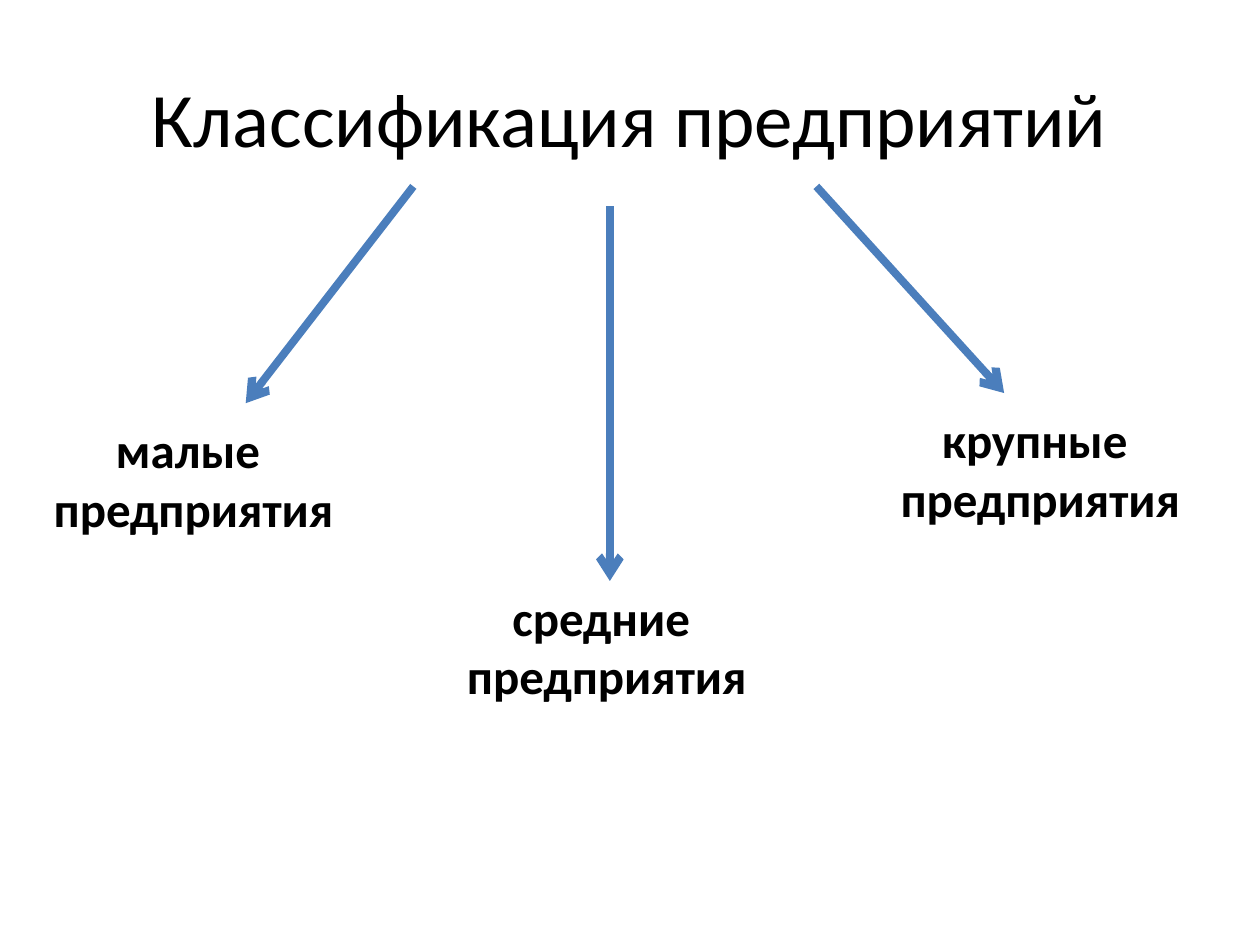
from dataclasses import dataclass

from lxml.etree import SubElement
from pptx import Presentation
from pptx.dml.color import RGBColor
from pptx.enum.shapes import MSO_CONNECTOR as Conn
from pptx.enum.text import MSO_ANCHOR as Anchor, MSO_AUTO_SIZE as AutoSize, PP_ALIGN as Align
from pptx.oxml.ns import qn
from pptx.util import Pt


@dataclass(frozen=True)
class Theme:
    font: str = "Calibri"
    text: RGBColor = RGBColor(0x00, 0x00, 0x00)
    arrow: RGBColor = RGBColor(0x4B, 0x7E, 0xBC)
    background: RGBColor = RGBColor(0xFF, 0xFF, 0xFF)
    title_size: float = 44
    label_size: float = 28
    arrow_width: float = 4.5


@dataclass(frozen=True)
class Branch:
    """One class of enterprise: its arrow ends and its label's corner, in points."""
    kind: str
    start: tuple[float, float]
    end: tuple[float, float]
    label: tuple[float, float]


THEME = Theme()
LABEL_W, LABEL_H = 176.4, 75
BRANCHES = [
    Branch("малые ", (236.2, 106.5), (140.4, 230.4), (22.3, 236.2)),
    Branch("средние ", (348.5, 118), (348.5, 332), (258.5, 332)),
    Branch("крупные ", (466.5, 106.5), (573.8, 224.6), (506.2, 230.4)),
]


def style_paragraph(p, size: float, bold: bool = False) -> None:
    p.alignment = Align.CENTER
    p.font.name = THEME.font
    p.font.size = Pt(size)
    p.font.bold = bold
    p.font.color.rgb = THEME.text


def add_title(slide, text: str) -> None:
    sp = slide.shapes.title
    sp.left, sp.top, sp.width, sp.height = Pt(36), Pt(21.6), Pt(648), Pt(90)
    tf = sp.text_frame
    tf.text = text
    tf.vertical_anchor = Anchor.MIDDLE
    style_paragraph(tf.paragraphs[0], THEME.title_size)


def add_arrow(slide, branch: Branch) -> None:
    ends = (Pt(v) for v in branch.start + branch.end)
    line = slide.shapes.add_connector(Conn.STRAIGHT, *ends)
    line.line.color.rgb = THEME.arrow
    line.line.width = Pt(THEME.arrow_width)
    SubElement(line.line._get_or_add_ln(), qn("a:tailEnd"), type="arrow")
    SubElement(line._element.spPr, qn("a:effectLst"))


def add_label(slide, branch: Branch) -> None:
    x, y = branch.label
    sp = slide.shapes.add_textbox(Pt(x), Pt(y), Pt(LABEL_W), Pt(LABEL_H))
    tf = sp.text_frame
    tf.word_wrap = False
    tf.auto_size = AutoSize.SHAPE_TO_FIT_TEXT
    tf.text = f"{branch.kind}\nпредприятия"
    for p in tf.paragraphs:
        style_paragraph(p, THEME.label_size, bold=True)


def main() -> None:
    prs = Presentation()
    prs.slide_width, prs.slide_height = Pt(720), Pt(540)
    slide = prs.slides.add_slide(prs.slide_layouts[5])
    fill = slide.background.fill
    fill.solid()
    fill.fore_color.rgb = THEME.background

    # Heading
    add_title(slide, "Классификация предприятий")

    # Arrows from the heading to each class
    for branch in BRANCHES:
        add_arrow(slide, branch)

    # Class names
    for branch in BRANCHES:
        add_label(slide, branch)

    prs.save("out.pptx")


if __name__ == "__main__":
    main()
